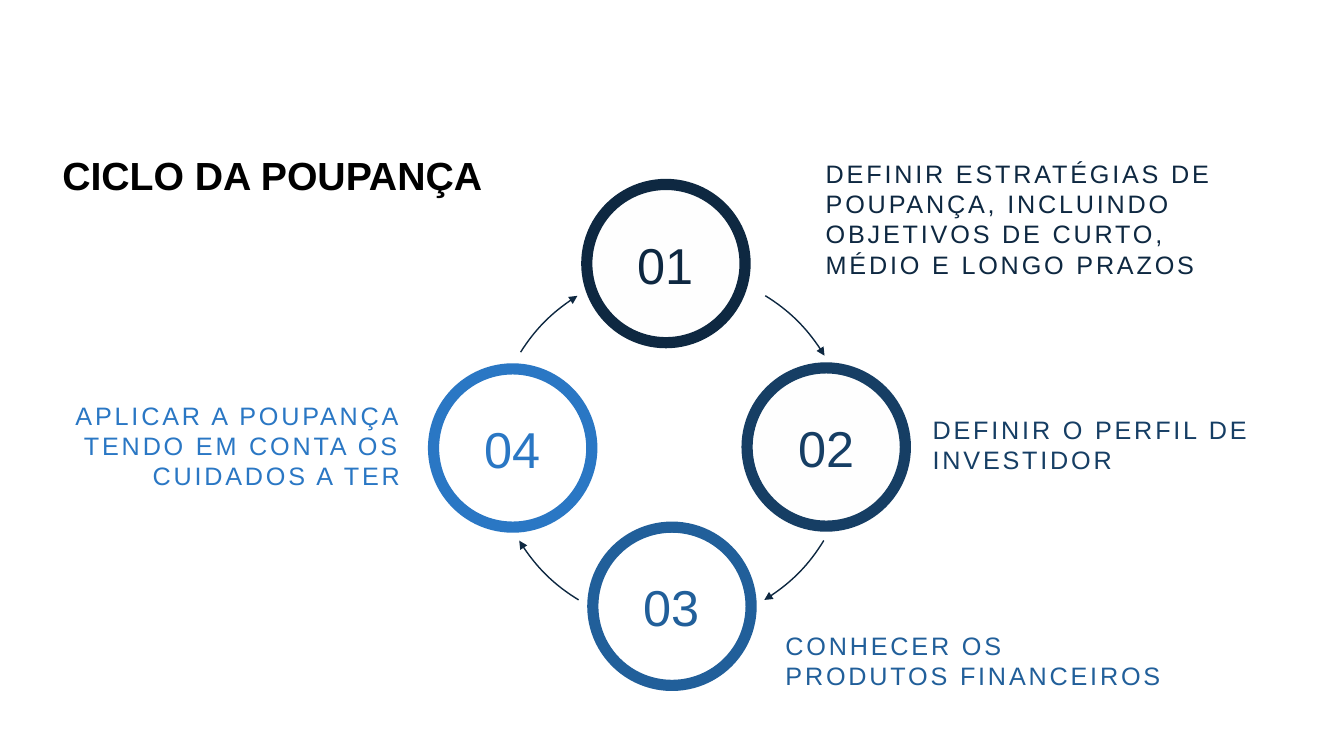
from dataclasses import dataclass

from lxml import etree
from pptx import Presentation
from pptx.dml.color import RGBColor
from pptx.enum import shapes, text
from pptx.oxml import ns
from pptx.util import Inches, Pt


@dataclass(frozen=True)
class Theme:
    font: str = "Arial"
    black: str = "000000"
    white: str = "FFFFFF"
    off_white: str = "FEFEFE"
    navy: str = "0E2841"
    dark_blue: str = "163E64"
    blue: str = "215F9A"
    light_blue: str = "2A77C4"
    title_size: int = 28
    number_size: int = 36
    label_size: int = 18
    ring_width: int = 8
    arrow_width: int = 1


THEME = Theme()
RING_DIAMETER = 1.57
CYCLE_BOX = (4.89, 2.67, 3.54, 3.54)

# Start and end angles in degrees, clockwise from the right
ARROWS = [(212.3, 238.2), (121.36, 148.55), (31.41, 58.68), (301.73, 329.04)]

# Number, colour, ring fill, ring position, label, label box, alignment
STEPS = [
    ("01", THEME.navy, THEME.off_white, (5.82, 1.83),
     "DEFINIR ESTRATÉGIAS DE POUPANÇA, INCLUINDO OBJETIVOS DE CURTO, "
     "MÉDIO E LONGO PRAZOS",
     (8.19, 1.47, 4.37, 1.22), text.PP_ALIGN.LEFT),
    ("02", THEME.dark_blue, THEME.off_white, (7.41, 3.65),
     "DEFINIR O PERFIL DE INVESTIDOR",
     (9.25, 4.01, 3.82, 1.22), text.PP_ALIGN.LEFT),
    ("03", THEME.blue, THEME.white, (5.88, 5.23),
     "CONHECER OS PRODUTOS FINANCEIROS",
     (7.79, 6.15, 3.82, 1.22), text.PP_ALIGN.LEFT),
    ("04", THEME.light_blue, THEME.white, (4.3, 3.66),
     "APLICAR A POUPANÇA TENDO EM CONTA OS CUIDADOS A TER",
     (0.37, 3.87, 3.6, 1.22), text.PP_ALIGN.RIGHT),
]


def set_attributes(target, values):
    for name, value in values.items():
        setattr(target, name, value)


def write(shape, wording, size, colour, frame=None, paragraph_format=None, bold=False):
    """Fill a shape with one formatted paragraph and return its run."""
    text_frame = shape.text_frame
    set_attributes(text_frame, {"word_wrap": True, **(frame or {})})
    paragraph = text_frame.paragraphs[0]
    set_attributes(paragraph, paragraph_format or {})
    run = paragraph.add_run()
    run.text = wording
    set_attributes(run.font, {"name": THEME.font, "size": Pt(size), "bold": bold})
    run.font.color.rgb = RGBColor.from_string(colour)
    return run


def add_outlined_shape(slide, preset, box, colour, width):
    shape = slide.shapes.add_shape(preset, *map(Inches, box))
    shape.shadow.inherit = False
    shape.line.color.rgb = RGBColor.from_string(colour)
    shape.line.width = Pt(width)
    return shape


def add_arrow(slide, start, end):
    arc = add_outlined_shape(slide, shapes.MSO_SHAPE.ARC, CYCLE_BOX,
                             THEME.navy, THEME.arrow_width)
    arc.fill.background()
    for index, degrees in enumerate((start, end)):
        arc.adjustments[index] = degrees * 0.6  # 60000ths of a degree / 100000
    line = arc.line._get_or_add_ln()
    etree.SubElement(line, ns.qn("a:tailEnd"), type="triangle")


def add_ring(slide, number, colour, fill, position):
    box = (*position, RING_DIAMETER, RING_DIAMETER)
    ring = add_outlined_shape(slide, shapes.MSO_SHAPE.OVAL, box,
                              colour, THEME.ring_width)
    ring.fill.solid()
    ring.fill.fore_color.rgb = RGBColor.from_string(fill)
    frame = {"margin_left": 0, "margin_top": Inches(0.16), "margin_right": 0,
             "margin_bottom": 0, "vertical_anchor": text.MSO_ANCHOR.MIDDLE}
    write(ring, number, THEME.number_size, colour, frame,
          {"alignment": text.PP_ALIGN.CENTER, "line_spacing": 0.7})


def add_label(slide, wording, colour, box, alignment):
    label = slide.shapes.add_textbox(*map(Inches, box))
    frame = {"margin_left": 0, "margin_top": Inches(0.1),
             "margin_right": 0, "margin_bottom": Inches(0.1)}
    run = write(label, wording, THEME.label_size, colour, frame,
                {"alignment": alignment})
    run._r.get_or_add_rPr().set("spc", "200")


def add_title(slide, wording):
    title = slide.shapes.add_textbox(*map(Inches, (0.52, 1.5, 5.3, 0.91)))
    write(title, wording, THEME.title_size, THEME.black,
          paragraph_format={"line_spacing": 0.9}, bold=True)


def main():
    presentation = Presentation()
    presentation.slide_width = Inches(13.33)
    presentation.slide_height = Inches(7.5)
    slide = presentation.slides.add_slide(presentation.slide_layouts[6])

    for start, end in ARROWS:
        add_arrow(slide, start, end)
    for number, colour, fill, position, wording, box, alignment in STEPS:
        add_ring(slide, number, colour, fill, position)
        add_label(slide, wording, colour, box, alignment)
    add_title(slide, "CICLO DA POUPANÇA")

    presentation.save("out.pptx")


if __name__ == "__main__":
    main()
